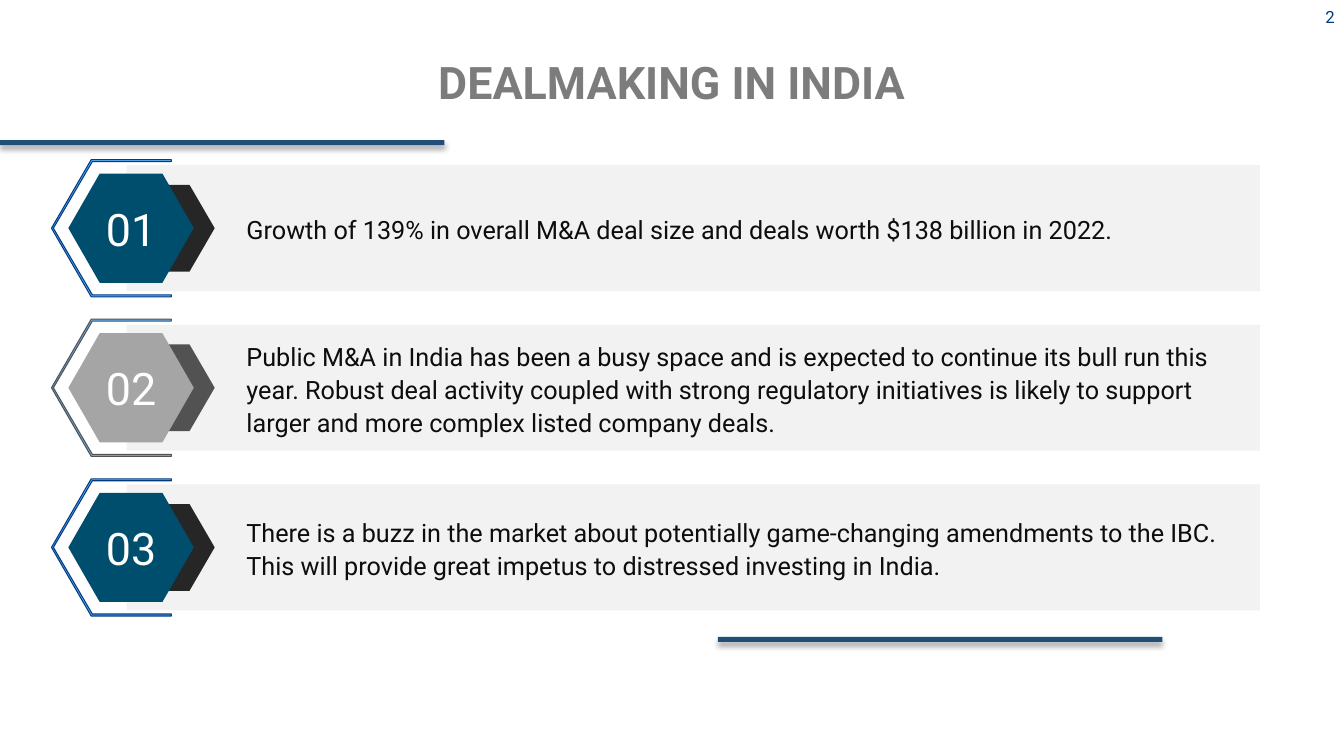
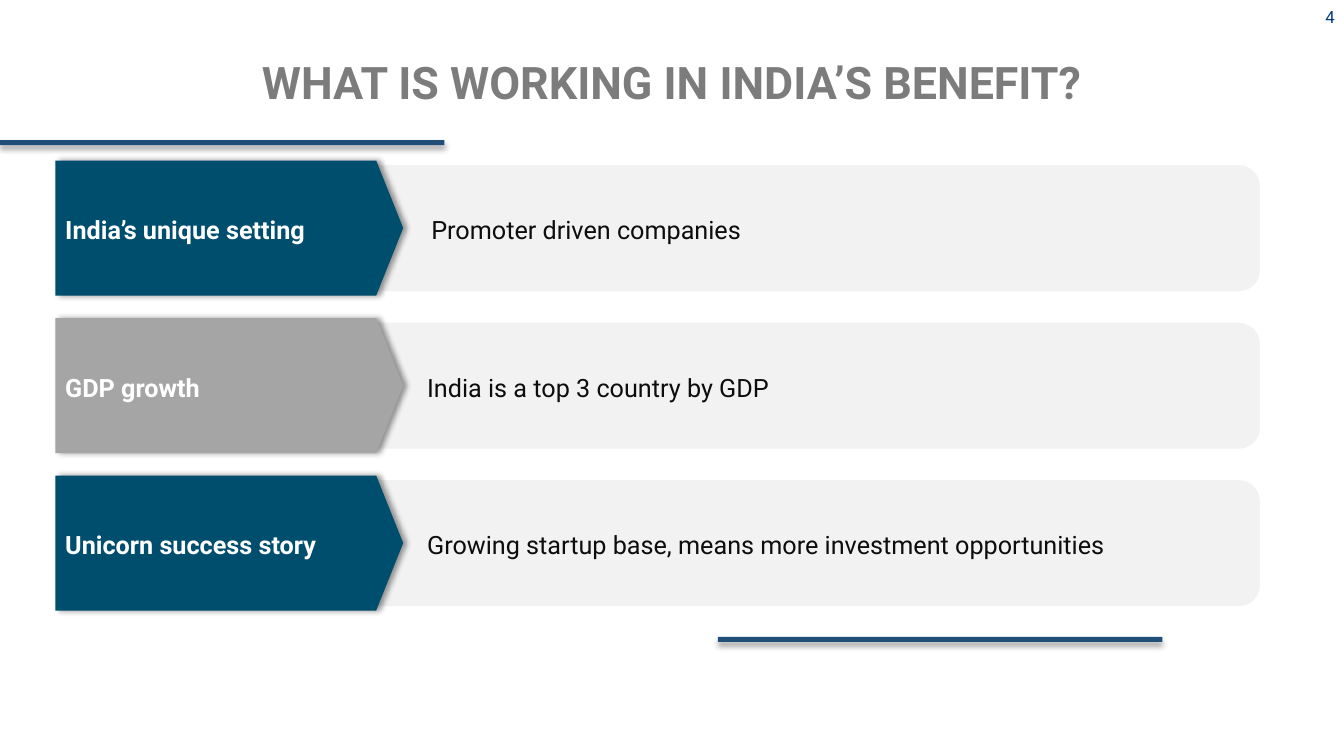
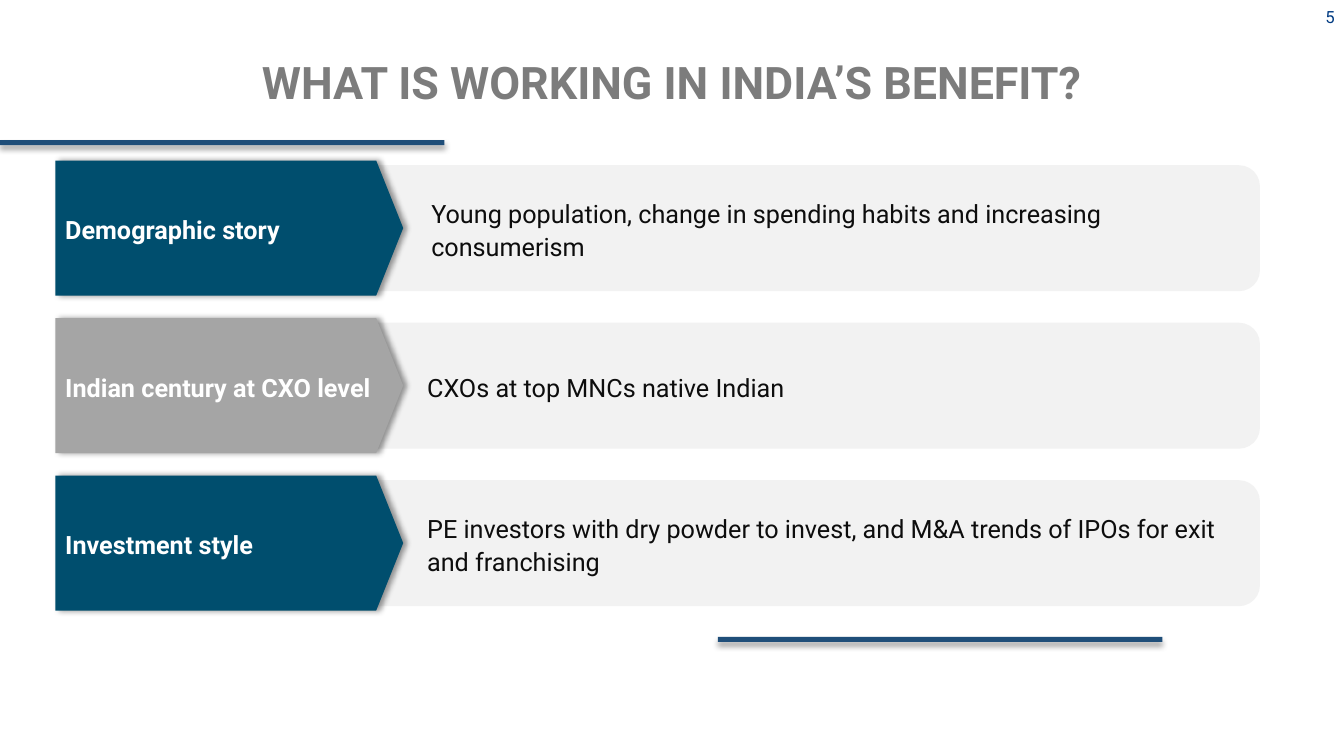
from lxml.etree import SubElement
from pptx import Presentation
from pptx.dml.color import RGBColor
from pptx.enum.shapes import MSO_SHAPE as Preset
from pptx.enum.text import MSO_ANCHOR as Anchor, PP_ALIGN as Align
from pptx.oxml.ns import qn
from pptx.util import Pt

WHITE = RGBColor(0xFF, 0xFF, 0xFF)
TEAL = RGBColor(0x00, 0x4E, 0x6E)
SILVER = RGBColor(0xA5, 0xA5, 0xA5)
PALE = RGBColor(0xF2, 0xF2, 0xF2)
BLACK = RGBColor(0x26, 0x26, 0x26)
CHARCOAL = RGBColor(0x52, 0x52, 0x52)
INK = RGBColor(0x0D, 0x0D, 0x0D)
TITLE_GRAY = RGBColor(0x7C, 0x7C, 0x7C)
NAVY = RGBColor(0x00, 0x3B, 0x82)
SKY = RGBColor(0x5E, 0xB2, 0xFC)
BAR_BLUE = RGBColor(0x1F, 0x4E, 0x79)

TITLE = {"size": Pt(32), "bold": True}
NUMBER = {"size": Pt(32), "bold": False}
LABEL = {"size": Pt(18), "bold": True}
BODY = {"size": Pt(18), "bold": False}
PAGE = {"size": Pt(12), "bold": False}


def paint(shape, fill, line=None, shadow_angle=None):
    shape.shadow.inherit = False
    shape.fill.solid()
    shape.fill.fore_color.rgb = fill
    if line is None:
        shape.line.fill.background()
    else:
        shape.line.color.rgb = line
        shape.line.width = Pt(0.75)
    if shadow_angle is not None:
        effects = shape.element.spPr.find(qn("a:effectLst"))
        shadow = SubElement(effects, qn("a:outerShdw"), blurRad=str(Pt(4)), dist=str(Pt(3)),
                            dir=str(shadow_angle * 60000), algn="t", rotWithShape="0")
        color = SubElement(shadow, qn("a:srgbClr"), val="000000")
        SubElement(color, qn("a:alpha"), val="40000")


def write(shape, text, style, color, align=Align.LEFT, inset=(7.2, 7.2), spacing=1.09):
    side, edge = map(Pt, inset)
    frame = shape.text_frame
    frame_format = {"word_wrap": True, "vertical_anchor": Anchor.MIDDLE, "margin_left": side,
                    "margin_right": side, "margin_top": edge, "margin_bottom": edge}
    for name, value in frame_format.items():
        setattr(frame, name, value)
    paragraph = frame.paragraphs[0]
    paragraph.text = text
    paragraph.alignment = align
    paragraph.line_spacing = spacing
    font = paragraph.runs[0].font
    for name, value in {"name": "Roboto", **style}.items():
        setattr(font, name, value)
    font.color.rgb = color


presentation = Presentation()
presentation.slide_width = Pt(960)
presentation.slide_height = Pt(540)

BENEFIT_TITLE = "WHAT IS WORKING IN INDIA’S BENEFIT?"
decks = [
    ("2", "DEALMAKING IN INDIA", [
        ("01", "Growth of 139% in overall M&A deal size and deals worth $138 billion in 2022."),
        ("02", "Public M&A in India has been a busy space and is expected to continue its bull run "
               "this year. Robust deal activity coupled with strong regulatory initiatives is likely "
               "to support larger and more complex listed company deals."),
        ("03", "There is a buzz in the market about potentially game-changing amendments to the IBC. "
               "This will provide great impetus to distressed investing in India."),
    ]),
    ("4", BENEFIT_TITLE, [
        ("India’s unique setting", "Promoter driven companies"),
        ("GDP growth", "India is a top 3 country by GDP"),
        ("Unicorn success story", "Growing startup base, means more investment opportunities"),
    ]),
    ("5", BENEFIT_TITLE, [
        ("Demographic story", "Young population, change in spending habits and increasing consumerism"),
        ("Indian century at CXO level", "CXOs at top MNCs native Indian"),
        ("Investment style", "PE investors with dry powder to invest, and M&A trends of IPOs for exit "
                             "and franchising"),
    ]),
]

FIRST_CENTER = 163
ROW_COLORS = [(TEAL, BLACK, NAVY), (SILVER, CHARCOAL, CHARCOAL), (TEAL, BLACK, NAVY)]
ARROW = [(114.5, -31), (114.5, 31), (135.4, 31), (153.4, 0), (135.4, -31)]
BRACKET = [(65.2, -49), (36.8, 0), (65.2, 49), (122.4, 49), (122.4, 47.6),
           (66, 47.6), (38.2, 0), (66, -47.6), (122.4, -47.6), (122.4, -49)]
HEXAGON = [(71.2, -39), (48.8, 0), (71.2, 39), (116, 39), (138.4, 0), (116, -39)]

for page, title, rows in decks:
    slide = presentation.slides.add_slide(presentation.slide_layouts[6])
    shapes = slide.shapes
    page_box = shapes.add_textbox(Pt(936.5), Pt(4.5), Pt(17), Pt(14.4))
    write(page_box, page, PAGE, NAVY, Align.RIGHT, (0, 0), 1.0)
    title_box = shapes.add_textbox(Pt(12), Pt(24), Pt(936), Pt(65))
    write(title_box, title, TITLE, TITLE_GRAY, Align.CENTER, (0, 3.6))
    for left, top in [(0, 100), (512.8, 455)]:
        bar = shapes.add_shape(Preset.RECTANGLE, Pt(left), Pt(top), Pt(317.5), Pt(3.6))
        paint(bar, BAR_BLUE, shadow_angle=90)

    numbered = page == "2"
    pitch = 114 if numbered else 112.5
    for index, (label, text) in enumerate(rows):
        center = FIRST_CENTER + index * pitch
        main, dark, outline = ROW_COLORS[index]
        kind, left = (Preset.RECTANGLE, 90.5) if numbered else (Preset.ROUNDED_RECTANGLE, 236)
        band = shapes.add_shape(kind, Pt(left), Pt(center - 45), Pt(900 - left), Pt(90))
        paint(band, PALE)
        if numbered:
            text_left, text_right = 169, 886
            for points, fill, line in [(ARROW, dark, None), (BRACKET, SKY, outline), (HEXAGON, main, None)]:
                corners = [(Pt(x), Pt(center + y)) for x, y in points]
                builder = shapes.build_freeform(*corners[0])
                builder.add_line_segments(corners[1:])
                badge = builder.convert_to_shape()
                paint(badge, fill, line)
            write(badge, label, NUMBER, WHITE, Align.CENTER, spacing=1.0)
        else:
            text_left, text_right = (301, 883) if index == 0 else (298, 886)
            plate = shapes.add_shape(Preset.PENTAGON, Pt(39.5), Pt(center - 48.3), Pt(248.5), Pt(96.5))
            plate.adjustments[0] = 0.2
            paint(plate, main, shadow_angle=0)
            write(plate, label, LABEL, WHITE)
        text_box = shapes.add_textbox(Pt(text_left), Pt(center - 32), Pt(text_right - text_left), Pt(64))
        write(text_box, text, BODY, INK)

presentation.save("out.pptx")
